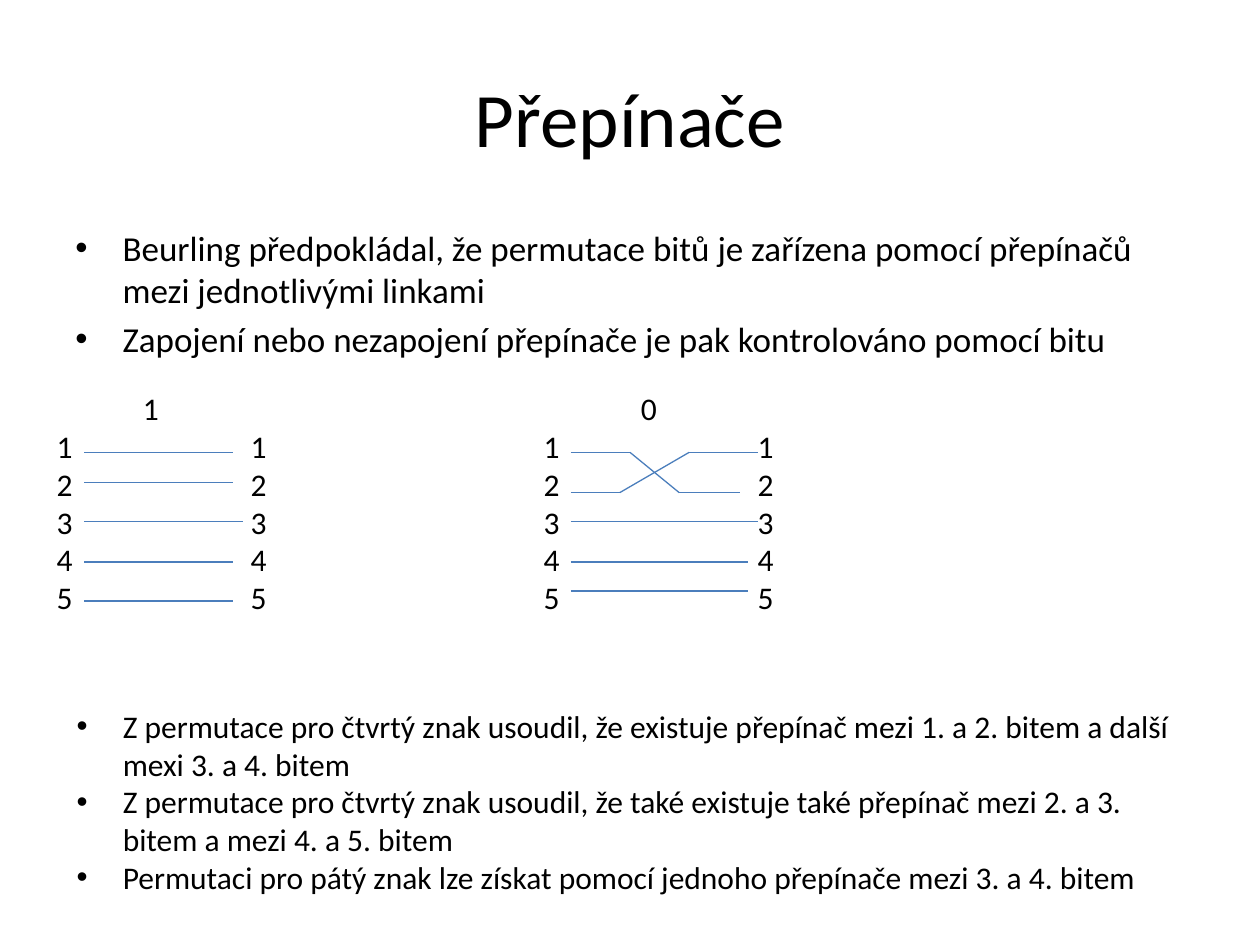
"""Build the slide about switches between bit lines."""
from itertools import pairwise

from lxml.etree import SubElement
from pptx import Presentation
from pptx.dml.color import RGBColor
from pptx.enum.shapes import MSO_CONNECTOR as Conn
from pptx.enum.text import MSO_ANCHOR as Anchor, PP_ALIGN as Align
from pptx.oxml.ns import qn
from pptx.util import Pt

BLACK = RGBColor(0x00, 0x00, 0x00)
BLUE = RGBColor(0x4B, 0x7E, 0xBC)
FONT = "Calibri"


class Page:
    def __init__(self, slide):
        self.slide = slide

    def style(self, para, size):
        for run in para.runs:
            run.font.name = FONT
            run.font.size = Pt(size)
            run.font.color.rgb = BLACK

    def title(self, box, text):
        shape = self.slide.shapes.title
        shape.left, shape.top, shape.width, shape.height = map(Pt, box)
        frame = shape.text_frame
        frame.text = text
        frame.vertical_anchor = Anchor.MIDDLE
        para = frame.paragraphs[0]
        para.alignment = Align.CENTER
        self.style(para, 44)

    def text(self, box, lines, size):
        frame = self.slide.shapes.add_textbox(*map(Pt, box)).text_frame
        frame.word_wrap = True
        frame.text = "\n".join(lines)
        for para in frame.paragraphs:
            self.style(para, size)
        return frame.paragraphs

    def bullets(self, box, lines, size, indent, gap=0):
        for para in self.text(box, lines, size):
            para.space_before = Pt(gap)
            props = para._p.get_or_add_pPr()
            props.set("marL", str(Pt(indent)))
            props.set("indent", str(-Pt(indent)))
            SubElement(props, qn("a:buFont"), typeface="Arial")
            SubElement(props, qn("a:buChar"), char="•")

    def columns(self, box, rows, size):
        paras = self.text(box, ["\t".join(cells) for cells, _ in rows], size)
        for para, (_, stops) in zip(paras, rows):
            tabs = SubElement(para._p.get_or_add_pPr(), qn("a:tabLst"))
            for stop in stops:
                SubElement(tabs, qn("a:tab"), pos=str(Pt(stop)), algn="l")

    def wire(self, *points):
        for start, end in pairwise(points):
            line = self.slide.shapes.add_connector(
                Conn.STRAIGHT, *map(Pt, start + end))
            line.line.color.rgb = BLUE
            line.line.width = Pt(0.75)
            SubElement(line._element.spPr, qn("a:effectLst"))


def main():
    deck = Presentation()
    deck.slide_width, deck.slide_height = Pt(720), Pt(540)
    page = Page(deck.slides.add_slide(deck.slide_layouts[5]))

    page.title((36, 21.6, 648, 90), "Přepínače")
    page.bullets((36, 126, 648, 98.6), [
        "Beurling předpokládal, že permutace bitů je zařízena pomocí "
        "přepínačů mezi jednotlivými linkami",
        "Zapojení nebo nezapojení přepínače je pak kontrolováno pomocí bitu",
    ], 20, 27, 4)

    rows = [(["", "1", "0"], [49.3, 333.9])]
    rows += [([bit] * 4, [110.9, 278.4, 400.7]) for bit in "12345"]
    page.columns((25.2, 218.9, 694.8, 138.2), rows, 18)

    left, mid = 48.2, 326.2
    for y, end in ((258.5, 133.2), (275.8, 133.2), (298.1, 139),
                   (321.1, 133.2), (343.4, 133.2)):
        page.wire((left, y), (end, y))
    for y, end in ((298.1, 433.4), (321.1, 427.7), (337.7, 427.7)):
        page.wire((mid, y), (end, y))
    high, low = 258.5, 281.5
    page.wire((mid, high), (360, high), (388.1, low), (422.6, low))
    page.wire((mid, low), (354.2, low), (393.8, high), (433.4, high))

    page.bullets((36.7, 400.3, 643, 116.6), [
        "Z permutace pro čtvrtý znak usoudil, že existuje přepínač mezi "
        "1. a 2. bitem a další\vmexi 3. a 4. bitem",
        "Z permutace pro čtvrtý znak usoudil, že také existuje také "
        "přepínač mezi 2. a 3.\vbitem a mezi 4. a 5. bitem",
        "Permutaci pro pátý znak lze získat pomocí jednoho přepínače "
        "mezi 3. a 4. bitem",
    ], 18, 26.4)
    deck.save("out.pptx")


if __name__ == "__main__":
    main()
